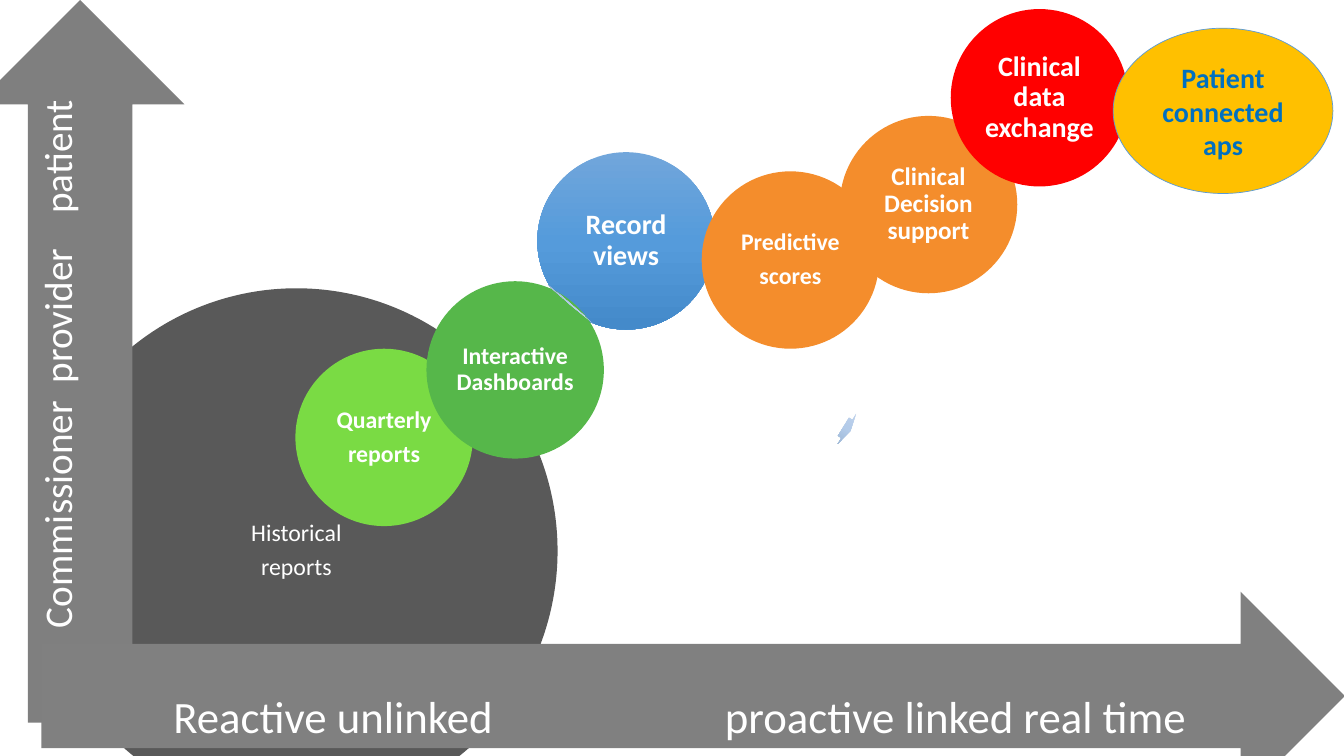
from copy import deepcopy
from dataclasses import dataclass

from lxml.etree import SubElement
from pptx import Presentation
from pptx.dml.color import RGBColor
from pptx.enum.shapes import MSO_SHAPE
from pptx.enum.text import MSO_ANCHOR, PP_ALIGN
from pptx.oxml.ns import qn
from pptx.util import Pt

PX = 9144  # EMU per px, 100 px to the inch
BUBBLE = 176
PALE_BLUE = ("C0D2EB", "B3CBE9", "9BB4D3")
RECORD_BLUE = ("71A6DB", "559BDB", "448ACA")


@dataclass
class Bubble:
    left: int
    top: int
    lines: tuple
    colours: tuple
    size: int = 17
    width: int = BUBBLE
    height: int = BUBBLE
    inset: int = 2
    bold: bool = True
    text_colour: str = "FFFFFF"
    outline: str = ""
    line_spacing: float = 0.9
    gap: int = 6


@dataclass
class Link:
    left: int
    top: int
    width: int
    height: int
    rotation: float


@dataclass
class Axis:
    left: int
    top: int
    width: int
    rotation: int
    colour: str
    labels: tuple
    size: int
    start: int
    drop: int
    tabs: tuple


def rgb(colour: str) -> RGBColor:
    return RGBColor.from_string(colour)


def paint(shape, colours: tuple) -> None:
    """Fill with one colour, or evenly spaced stops from top to bottom."""
    fill = shape.fill
    if len(colours) == 1:
        fill.solid()
        fill.fore_color.rgb = rgb(colours[0])
        return
    fill.gradient()
    fill.gradient_angle = 270
    stop_list = shape._element.spPr.find(".//" + qn("a:gsLst"))
    for _ in colours[2:]:
        stop_list.insert(1, deepcopy(stop_list[0]))
    for index, (stop, colour) in enumerate(zip(fill.gradient_stops, colours)):
        stop.position = index / (len(colours) - 1)
        stop.color.rgb = rgb(colour)


def add_shape(page, kind, left: int, top: int, width: int, height: int, colours: tuple):
    shape = page.shapes.add_shape(kind, left * PX, top * PX, width * PX, height * PX)
    shape.shadow.inherit = False
    shape.line.fill.background()
    paint(shape, colours)
    return shape


def style(para, size: int, colour: str, bold: bool = False) -> None:
    for span in para.runs:
        span.font.name = "Calibri"
        span.font.size = Pt(size)
        span.font.bold = bold
        span.font.color.rgb = rgb(colour)


def add_bubble(page, bubble: Bubble) -> None:
    shape = add_shape(page, MSO_SHAPE.OVAL, bubble.left, bubble.top,
                      bubble.width, bubble.height, bubble.colours)
    if bubble.outline:
        shape.line.color.rgb = rgb(bubble.outline)
        shape.line.width = Pt(0.5)
    frame = shape.text_frame
    frame.word_wrap = True
    frame.vertical_anchor = MSO_ANCHOR.MIDDLE
    frame.margin_left = frame.margin_right = bubble.inset * PX
    frame.margin_top = frame.margin_bottom = bubble.inset * PX
    frame.text = "\n".join(bubble.lines)
    for para in frame.paragraphs:
        para.alignment = PP_ALIGN.CENTER
        para.line_spacing = bubble.line_spacing
        para.space_after = Pt(bubble.gap)
        style(para, bubble.size, bubble.text_colour, bubble.bold)


def add_link(page, link: Link) -> None:
    shape = add_shape(page, MSO_SHAPE.RIGHT_ARROW, link.left, link.top,
                      link.width, link.height, PALE_BLUE)
    shape.adjustments[0] = 0.6
    shape.rotation = link.rotation


def add_axis(page, axis: Axis) -> None:
    shape = add_shape(page, MSO_SHAPE.RIGHT_ARROW, axis.left, axis.top,
                      axis.width, 207, (axis.colour,))
    shape.rotation = axis.rotation
    frame = shape.text_frame
    frame.word_wrap = True
    frame.vertical_anchor = MSO_ANCHOR.TOP
    frame.margin_left = axis.start * PX
    frame.margin_top = axis.drop * PX
    frame.margin_bottom = 0
    para = frame.paragraphs[0]
    para.text = "\t".join(axis.labels)
    para.alignment = PP_ALIGN.LEFT
    tab_list = SubElement(para._p.get_or_add_pPr(), qn("a:tabLst"))
    for position in axis.tabs:
        SubElement(tab_list, qn("a:tab"), pos=str(position * PX), algn="l")
    style(para, axis.size, "FFFFFF")


LATER_BUBBLES = (
    Bubble(533, 151, ("Record views",), RECORD_BLUE, 20, inset=3),
    Bubble(696, 170, ("Predictive", "scores"), ("F48D2C",)),
    Bubble(833, 115, ("Clinical Decision support",), ("F48D2C",), 18, inset=3),
    Bubble(943, 9, ("Clinical data exchange",), ("FF0000",), 20, inset=3),
)
EARLY_BUBBLES = (
    Bubble(35, 286, ("Historical", "reports"), ("595959",),
           width=518, height=521, bold=False),
    Bubble(293, 346, ("Quarterly", "reports"), ("7ADB44",)),
    Bubble(423, 279, ("Interactive Dashboards",), ("56B74A",)),
)
PATIENT_BUBBLE = Bubble(1104, 28, ("Patient connected", "aps"), ("FFC000",), 20,
                        218, 164, 5, text_colour="0070C0", outline="5B9BD5",
                        line_spacing=1.0, gap=0)
LOOSE_LINK = Link(836, 408, 8, 35, 31.4)
DASHBOARD_LINK = Link(566, 273, 1, 59, 130.5)
AXES = (
    Axis(-279, 255, 717, 270, "7F7F7F", ("Commissioner", "provider", "patient"),
         28, 94, 5, (243, 411)),
    Axis(41, 587, 1293, 0, "808080", ("Reactive unlinked", "proactive linked real time"),
         32, 131, 45, (547,)),
)


def main() -> None:
    deck = Presentation()
    deck.slide_width = 1333 * PX
    deck.slide_height = 750 * PX
    page = deck.slides.add_slide(deck.slide_layouts[6])

    # Stages from record views to data exchange
    for bubble in LATER_BUBBLES:
        add_bubble(page, bubble)
    add_link(page, LOOSE_LINK)

    # Stages from historical reports to dashboards
    for bubble in EARLY_BUBBLES:
        add_bubble(page, bubble)
    add_link(page, DASHBOARD_LINK)

    # Axis arrows and the final stage
    for axis in AXES:
        add_axis(page, axis)
    add_bubble(page, PATIENT_BUBBLE)

    deck.save("out.pptx")


if __name__ == "__main__":
    main()
